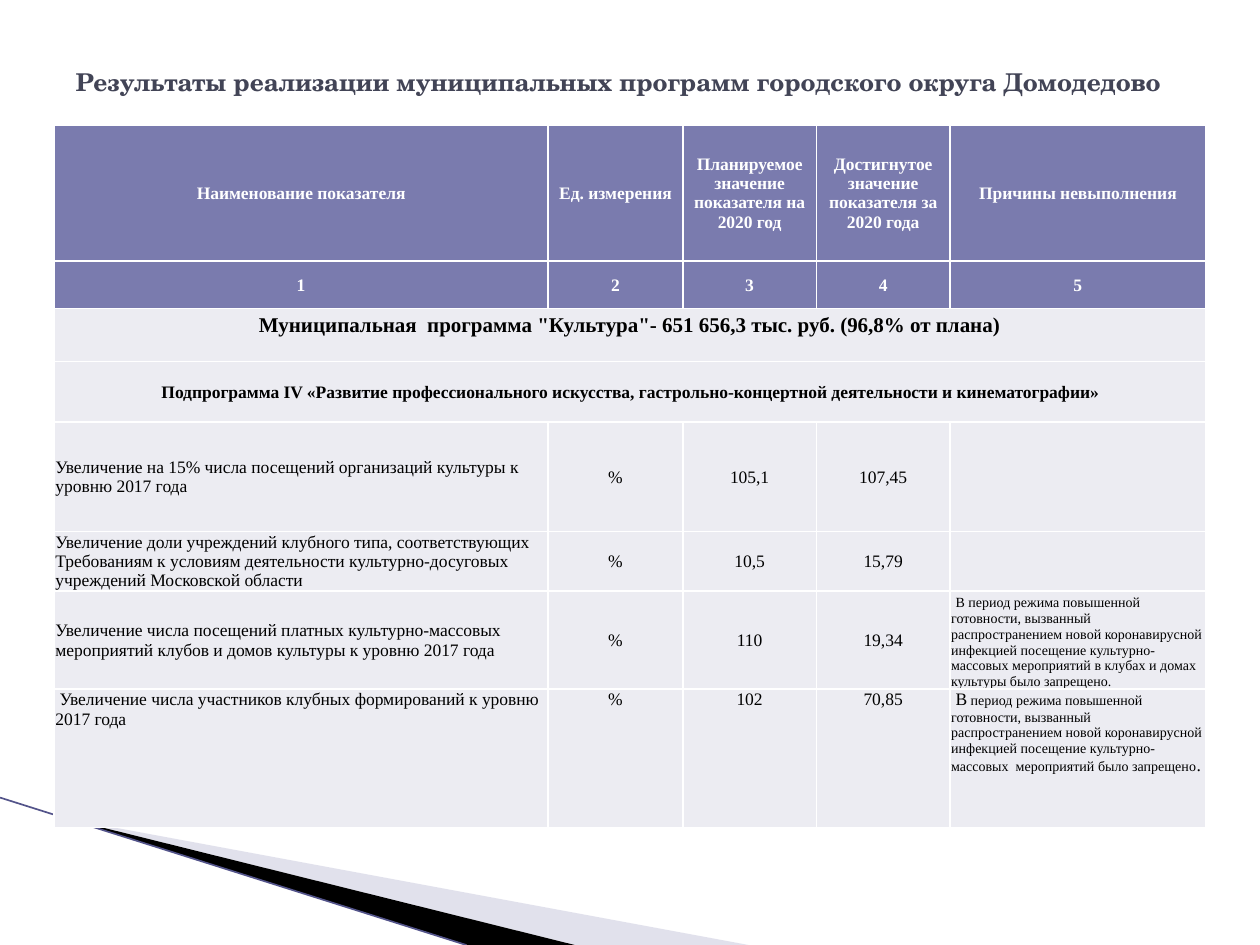
from lxml import etree
from pptx import Presentation
from pptx.dml.color import RGBColor
from pptx.enum.shapes import MSO_CONNECTOR
from pptx.enum.text import MSO_ANCHOR, MSO_AUTO_SIZE, PP_ALIGN
from pptx.oxml.ns import qn
from pptx.util import Inches, Pt

LEFT, CENTER = PP_ALIGN.LEFT, PP_ALIGN.CENTER
TOP, MIDDLE = MSO_ANCHOR.TOP, MSO_ANCHOR.MIDDLE
NO_AUTOFIT = MSO_AUTO_SIZE.NONE
STRAIGHT = MSO_CONNECTOR.STRAIGHT

SERIF = "Times New Roman"
HEADER_FILL, BODY_FILL = "7A7BAE", "ECECF2"
WHITE, BLACK, RED = "FFFFFF", "000000", "FF0000"

COLUMN_WIDTHS = [3.92, 1.07, 1.06, 1.06, 2.03]
ROW_HEIGHTS = [1.08, 0.38, 0.42, 0.48, 0.87, 0.38, 0.49, 1.1]
HEADERS = [
    ["Наименование показателя", "Ед. измерения",
     "Планируемое значение показателя на 2020 год",
     "Достигнутое значение показателя за 2020 года", "Причины невыполнения"],
    ["1", "2", "3", "4", "5"],
]
PROGRAM = 'Муниципальная  программа "Культура"- 651 656,3 тыс. руб. (96,8% от плана)'
SUBPROGRAM = ("Подпрограмма IV «Развитие профессионального искусства, "
              "гастрольно-концертной деятельности и кинематографии»")
REASON = ("период режима повышенной готовности, вызванный распространением новой "
          "коронавирусной инфекцией посещение культурно-массовых ")
VISITS_REASON = [
    (" ", {"color": RED}),
    ("В " + REASON + "мероприятий в клубах и домах культуры было запрещено.", {"size": 8}),
]
MEMBERS_REASON = [
    (" ", {"color": RED}),
    ("В", {}),
    (" " + REASON + " мероприятий было запрещено", {"size": 8}),
    (".", {}),
]
INDICATORS = [
    (["Увеличение на 15% числа посещений организаций культуры к уровню 2017 года",
      "%", "105,1", "107,45", ""], MIDDLE, MIDDLE),
    (["Увеличение доли учреждений клубного типа, соответствующих Требованиям к условиям "
      "деятельности культурно-досуговых учреждений Московской области",
      "%", "10,5", "15,79", ""], TOP, MIDDLE),
    (["Увеличение числа посещений платных культурно-массовых мероприятий клубов и домов "
      "культуры к уровню 2017 года", "%", "110", "19,34", VISITS_REASON], MIDDLE, MIDDLE),
    ([" Увеличение числа участников клубных формирований к уровню 2017 года",
      "%", "102", "70,85", MEMBERS_REASON], TOP, TOP),
]


def rgb(value):
    return RGBColor.from_string(value)


def add_text(paragraph, text, size=10, font=SERIF, color=BLACK, bold=False, align=LEFT):
    paragraph.alignment = align
    run = paragraph.add_run()
    run.text = text
    run.font.size = Pt(size)
    run.font.name = font
    run.font.bold = bold
    run.font.color.rgb = rgb(color)


def add_wedge(slide, points, color, opacity=100):
    corners = [(Inches(x), Inches(y)) for x, y in points]
    builder = slide.shapes.build_freeform(*corners[0])
    builder.add_line_segments(corners[1:], close=True)
    wedge = builder.convert_to_shape()
    wedge.shadow.inherit = False
    wedge.line.fill.background()
    wedge.fill.solid()
    wedge.fill.fore_color.rgb = rgb(color)
    if opacity < 100:
        tint = next(wedge.fill._xPr.iter(qn("a:srgbClr")))
        etree.SubElement(tint, qn("a:alpha")).set("val", str(opacity * 1000))


def add_corner(slide, left, top, bottom):
    add_wedge(slide, [(left, top), (left + 5.4, bottom), (left + 4.02, bottom)], "B6B6D1", 40)
    add_wedge(slide, [(left, top), (left + 4.02, bottom), (left + 3.17, bottom)], BLACK)
    edge = slide.shapes.add_connector(
        STRAIGHT, Inches(0), Inches(6.33), Inches(3.7), Inches(bottom))
    edge.line.color.rgb = rgb("53548A")
    edge.line.width = Pt(0.95)
    etree.SubElement(edge._element.spPr, qn("a:effectLst"))


def place_title(slide, left, top, width, height):
    title = slide.shapes.title
    title.left, title.top = Inches(left), Inches(top)
    title.width, title.height = Inches(width), Inches(height)
    frame = title.text_frame
    frame.auto_size = NO_AUTOFIT
    frame.word_wrap = True
    frame.vertical_anchor = MIDDLE
    add_text(frame.paragraphs[0],
             "Результаты реализации муниципальных программ городского округа Домодедово",
             size=14, font="TeX Gyre Schola", color="424456", bold=True)


def style_cell(cell, fill):
    cell.margin_left = cell.margin_right = cell.margin_top = Inches(0.01)
    cell.margin_bottom = 0
    properties = cell._tc.get_or_add_tcPr()
    for side in ("lnL", "lnR", "lnT", "lnB"):
        border = etree.SubElement(properties, qn("a:" + side), w=str(Pt(1)))
        paint = etree.SubElement(border, qn("a:solidFill"))
        etree.SubElement(paint, qn("a:srgbClr"), val=WHITE)
    cell.fill.solid()
    cell.fill.fore_color.rgb = rgb(fill)


def fill_cell(cell, content, anchor=MIDDLE, **text_format):
    cell.vertical_anchor = anchor
    runs = [(content, {})] if isinstance(content, str) else content
    for text, changes in runs:
        if text:
            add_text(cell.text_frame.paragraphs[0], text, **{**text_format, **changes})


def add_results_table(slide, left, top, width, height):
    table = slide.shapes.add_table(
        len(ROW_HEIGHTS), len(COLUMN_WIDTHS),
        Inches(left), Inches(top), Inches(width), Inches(height)).table
    table.first_row = table.horz_banding = False
    for column, column_width in zip(table.columns, COLUMN_WIDTHS):
        column.width = Inches(column_width)
    for index, row_height in enumerate(ROW_HEIGHTS):
        table.rows[index].height = Inches(row_height)
        for cell in table.rows[index].cells:
            style_cell(cell, HEADER_FILL if index < len(HEADERS) else BODY_FILL)

    for row, labels in enumerate(HEADERS):
        for column, label in enumerate(labels):
            fill_cell(table.cell(row, column), label, color=WHITE, bold=True, align=CENTER)

    for row, (heading, size) in enumerate([(PROGRAM, 12), (SUBPROGRAM, 10)], len(HEADERS)):
        band = table.cell(row, 0)
        band.merge(table.cell(row, len(COLUMN_WIDTHS) - 1))
        fill_cell(band, heading, size=size, bold=True, align=CENTER)
    table.cell(len(HEADERS), 0).margin_bottom = Inches(0.16)

    for row, (values, name_anchor, value_anchor) in enumerate(INDICATORS, len(HEADERS) + 2):
        for column, value in enumerate(values):
            fill_cell(table.cell(row, column), value,
                      anchor=value_anchor if column else name_anchor,
                      align=CENTER if column in (1, 2, 3) else LEFT)


def main():
    presentation = Presentation()
    presentation.slide_width, presentation.slide_height = Inches(10), Inches(7.5)
    slide = presentation.slides.add_slide(presentation.slide_layouts[5])
    add_corner(slide, 0.54, 6.5, 7.5)
    place_title(slide, 0.5, 0.3, 9, 0.69)
    add_results_table(slide, 0.43, 0.99, sum(COLUMN_WIDTHS), sum(ROW_HEIGHTS))
    presentation.save("out.pptx")


if __name__ == "__main__":
    main()
